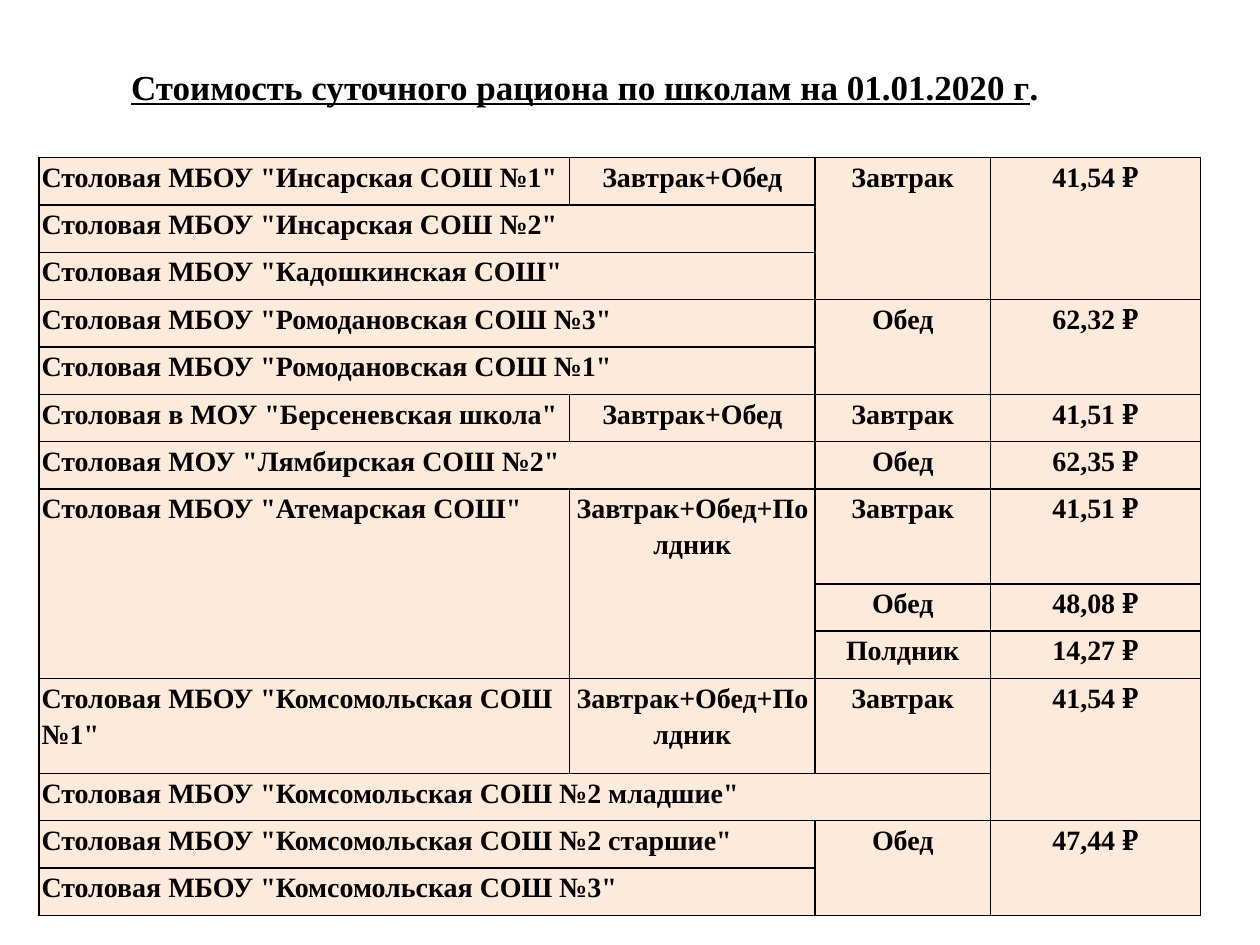
import pptx
import pptx.util
import pptx.dml.color
import pptx.enum.text
import pptx.oxml
import pptx.oxml.ns

Inches = pptx.util.Inches
Pt = pptx.util.Pt
COLORS = {"text": "000000", "border": "000000", "cell": "FDEADA"}
FONT = "Times New Roman"
COLUMN_WIDTHS = [4.21, 1.95, 1.39, 1.67]
ROW_HEIGHT = 0.376
TALL_ROWS = (7, 10)
BOTH = "Завтрак+Обед"
ALL_MEALS = "Завтрак+Обед+Полдник"
MERGED = None
RATIONS = [
    ['Столовая МБОУ "Инсарская СОШ №1"', BOTH, "Завтрак", "41,54 ₽"],
    ['Столовая МБОУ "Инсарская СОШ №2"', MERGED, "", ""],
    ['Столовая МБОУ "Кадошкинская СОШ"', MERGED, "", ""],
    ['Столовая МБОУ "Ромодановская СОШ №3"', MERGED, "Обед", "62,32 ₽"],
    ['Столовая МБОУ "Ромодановская СОШ №1"', MERGED, "", ""],
    ['Столовая в МОУ "Берсеневская школа"', BOTH, "Завтрак", "41,51 ₽"],
    ['Столовая МОУ "Лямбирская СОШ №2"', MERGED, "Обед", "62,35 ₽"],
    ['Столовая МБОУ "Атемарская СОШ"', ALL_MEALS, "Завтрак", "41,51 ₽"],
    ["", "", "Обед", "48,08 ₽"],
    ["", "", "Полдник", "14,27 ₽"],
    ['Столовая МБОУ "Комсомольская СОШ №1"', ALL_MEALS, "Завтрак", "41,54 ₽"],
    ['Столовая МБОУ "Комсомольская СОШ №2 младшие"', MERGED, MERGED, ""],
    ['Столовая МБОУ "Комсомольская СОШ №2 старшие"', MERGED, "Обед", "47,44 ₽"],
    ['Столовая МБОУ "Комсомольская СОШ №3"', MERGED, "", ""],
]


def style_font(font, size):
    """Apply the bold black serif face at the given size."""
    font.name = FONT
    font.size = Pt(size)
    font.bold = True
    font.color.rgb = pptx.dml.color.RGBColor.from_string(COLORS["text"])


def add_title(page, left, top, width, height):
    """Place the underlined heading with its plain full stop."""
    box = page.shapes.title
    box.left, box.top, box.width, box.height = map(Inches, (left, top, width, height))
    frame = box.text_frame
    frame.word_wrap = True
    frame.auto_size = pptx.enum.text.MSO_AUTO_SIZE.NONE
    frame.vertical_anchor = pptx.enum.text.MSO_ANCHOR.MIDDLE
    frame.margin_top = Inches(0.39)
    para = frame.paragraphs[0]
    para.alignment = pptx.enum.text.PP_ALIGN.LEFT
    for text, underlined in (("Стоимость суточного рациона по школам на 01.01.2020 г", True), (".", False)):
        span = para.add_run()
        span.text = text
        style_font(span.font, 20)
        span.font.underline = underlined


def set_borders(cell, open_sides):
    """Draw the cell's four borders, leaving the open sides unpainted."""
    properties = cell._tc.get_or_add_tcPr()
    for index, side in enumerate("LRTB"):
        paint = "<a:noFill/>" if side in open_sides else (
            f'<a:solidFill><a:srgbClr val="{COLORS["border"]}"/></a:solidFill>')
        line = pptx.oxml.parse_xml(
            f'<a:ln{side} {pptx.oxml.ns.nsdecls("a")} w="{Pt(1)}">{paint}</a:ln{side}>')
        properties.insert(index, line)


def fill_cell(cell, text, centered):
    """Set the cell's fill, insets and text."""
    cell.fill.solid()
    cell.fill.fore_color.rgb = pptx.dml.color.RGBColor.from_string(COLORS["cell"])
    cell.margin_left = cell.margin_right = Inches(0.02)
    cell.margin_top = cell.margin_bottom = 0
    para = cell.text_frame.paragraphs[0]
    para.text = text or ""
    para.line_spacing = 1.15
    align = pptx.enum.text.PP_ALIGN
    para.alignment = align.CENTER if centered else align.LEFT
    style_font(para.font, 16)
    for span in para.runs:
        style_font(span.font, 16)


def add_ration_table(page, left, top, width, height):
    """Place the price table, where a blank cell continues the one above it."""
    frame = page.shapes.add_table(len(RATIONS), len(COLUMN_WIDTHS),
                                  *map(Inches, (left, top, width, height)))
    table = frame.table
    table.first_row = table.horz_banding = False
    for column, column_width in zip(table.columns, COLUMN_WIDTHS):
        column.width = Inches(column_width)
    for row_index, values in enumerate(RATIONS):
        table.rows[row_index].height = Inches(ROW_HEIGHT * (2 if row_index in TALL_ROWS else 1))
        below = RATIONS[row_index + 1] if row_index + 1 < len(RATIONS) else [MERGED] * len(values)
        for column_index, text in enumerate(values):
            cell = table.cell(row_index, column_index)
            fill_cell(cell, text, column_index > 0)
            open_sides = ("T" if text == "" else "") + ("B" if below[column_index] == "" else "")
            set_borders(cell, open_sides)
        merged_count = values.count(MERGED)
        if merged_count:
            table.cell(row_index, 0).merge(table.cell(row_index, merged_count))


def main():
    """Build and save the one-page deck."""
    deck = pptx.Presentation()
    deck.slide_width, deck.slide_height = Inches(10), Inches(7.5)
    page = deck.slides.add_slide(deck.slide_layouts[5])
    add_ration_table(page, 0.31, 1.25, 9.22, 6.02)
    add_title(page, 0.94, -0.24, 8.59, 1.51)
    deck.save("out.pptx")


if __name__ == "__main__":
    main()
